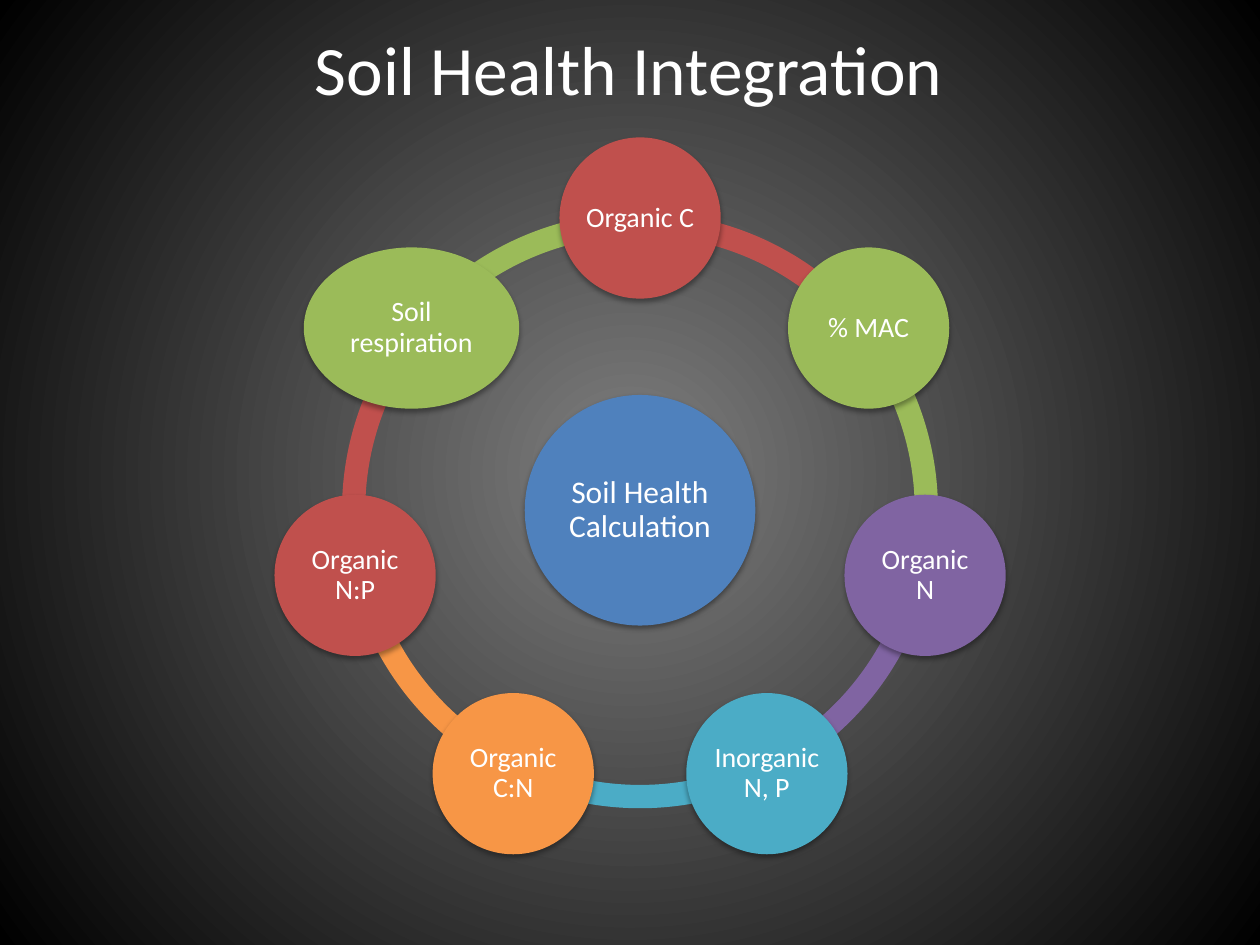
import math
from lxml import etree
from pptx import Presentation
from pptx import util as u
from pptx.dml.color import RGBColor
from pptx.enum import shapes, text
from pptx.oxml import ns, parse_xml

CENTER_X, CENTER_Y = 5.08, 4.05
ORBIT = 2.32
RING_SIZE, RING_THICKNESS = 4.73, 0.039
NODE_SIZE = 1.28
NODES = [
    ("Organic C", "C0504D", NODE_SIZE),
    ("% MAC", "9BBB59", NODE_SIZE),
    ("Organic N", "8064A2", NODE_SIZE),
    ("Inorganic N, P", "4BACC6", NODE_SIZE),
    ("Organic C:N", "F79646", NODE_SIZE),
    ("Organic N:P", "C0504D", NODE_SIZE),
    ("Soil respiration", "9BBB59", 1.71),
]
STEP = 360 / len(NODES)


def add_centered(kind, x, y, width, height, color):
    """Add a borderless, shadowless shape centred on x, y."""
    shape = page.shapes.add_shape(
        kind, u.Inches(x - width / 2), u.Inches(y - height / 2), u.Inches(width), u.Inches(height))
    shape.fill.solid()
    shape.fill.fore_color.rgb = RGBColor.from_string(color)
    shape.line.fill.background()
    shape.shadow.inherit = False
    return shape


def write(shape, words, size, inset):
    """Put one centred white paragraph in the middle of a shape."""
    frame = shape.text_frame
    frame.word_wrap = True
    frame.vertical_anchor = text.MSO_ANCHOR.MIDDLE
    frame.margin_left = frame.margin_right = u.Inches(inset)
    frame.margin_top = frame.margin_bottom = u.Inches(inset)
    para = frame.paragraphs[0]
    para.text = words
    para.alignment = text.PP_ALIGN.CENTER
    para.font.name = "Calibri"
    para.font.size = u.Pt(size)
    para.font.color.rgb = RGBColor.from_string("FFFFFF")
    return para


deck = Presentation()
deck.slide_width, deck.slide_height = u.Inches(10), u.Inches(7.5)
page = deck.slides.add_slide(deck.slide_layouts[6])

# Radial background
backdrop = page.background.fill
backdrop.gradient()
for stop, color in zip(backdrop.gradient_stops, ("7F7F7F", "000000")):
    stop.color.rgb = RGBColor.from_string(color)
gradient = page._element.find(".//" + ns.qn("a:gradFill"))
gradient.remove(gradient.find(ns.qn("a:lin")))
gradient.append(parse_xml(
    f'<a:path {ns.nsdecls("a")} path="circle">'
    '<a:fillToRect l="50000" t="50000" r="50000" b="50000"/></a:path>'))

title = page.shapes.add_textbox(u.Inches(0.49), u.Inches(0.25), u.Inches(9), u.Inches(0.58))
write(title, "Soil Health Integration", 39.6, 0.05)

# Ring: each arc runs clockwise from its node to the next, in the node's colour
for index, (label, color, width) in reversed(list(enumerate(NODES))):
    arc = add_centered(shapes.MSO_SHAPE.BLOCK_ARC, CENTER_X, CENTER_Y, RING_SIZE, RING_SIZE, color)
    start = (270 + index * STEP) % 360
    end = (start + STEP) % 360
    # Angles are stored in 60000ths of a degree, adjustments in 100000ths
    arc.adjustments[0] = start * 0.6
    arc.adjustments[1] = end * 0.6
    arc.adjustments[2] = RING_THICKNESS

# Hub and nodes: label, colour, x, y, width, height, text size, inset, shadow opacity and distance
circles = [("Soil Health Calculation", "4F81BD", CENTER_X, CENTER_Y, 1.83, 1.83, 18, 0.03, 38, 1.6)]
for index, (label, color, width) in enumerate(NODES):
    angle = math.radians(index * STEP)
    x = CENTER_X + ORBIT * math.sin(angle)
    y = CENTER_Y - ORBIT * math.cos(angle)
    circles.append((label, color, x, y, width, NODE_SIZE, 16, 0.02, 35, 1.8))

for label, color, x, y, width, height, size, inset, opacity, distance in circles:
    circle = add_centered(shapes.MSO_SHAPE.OVAL, x, y, width, height, color)
    write(circle, label, size, inset).line_spacing = 0.9
    effects = circle._element.spPr.find(ns.qn("a:effectLst"))
    shadow = etree.SubElement(
        effects, ns.qn("a:outerShdw"), blurRad=str(u.Pt(3.1)), dist=str(u.Pt(distance)),
        dir="5400000", rotWithShape="0")
    black = etree.SubElement(shadow, ns.qn("a:srgbClr"), val="000000")
    etree.SubElement(black, ns.qn("a:alpha"), val=str(opacity * 1000))

deck.save("out.pptx")
